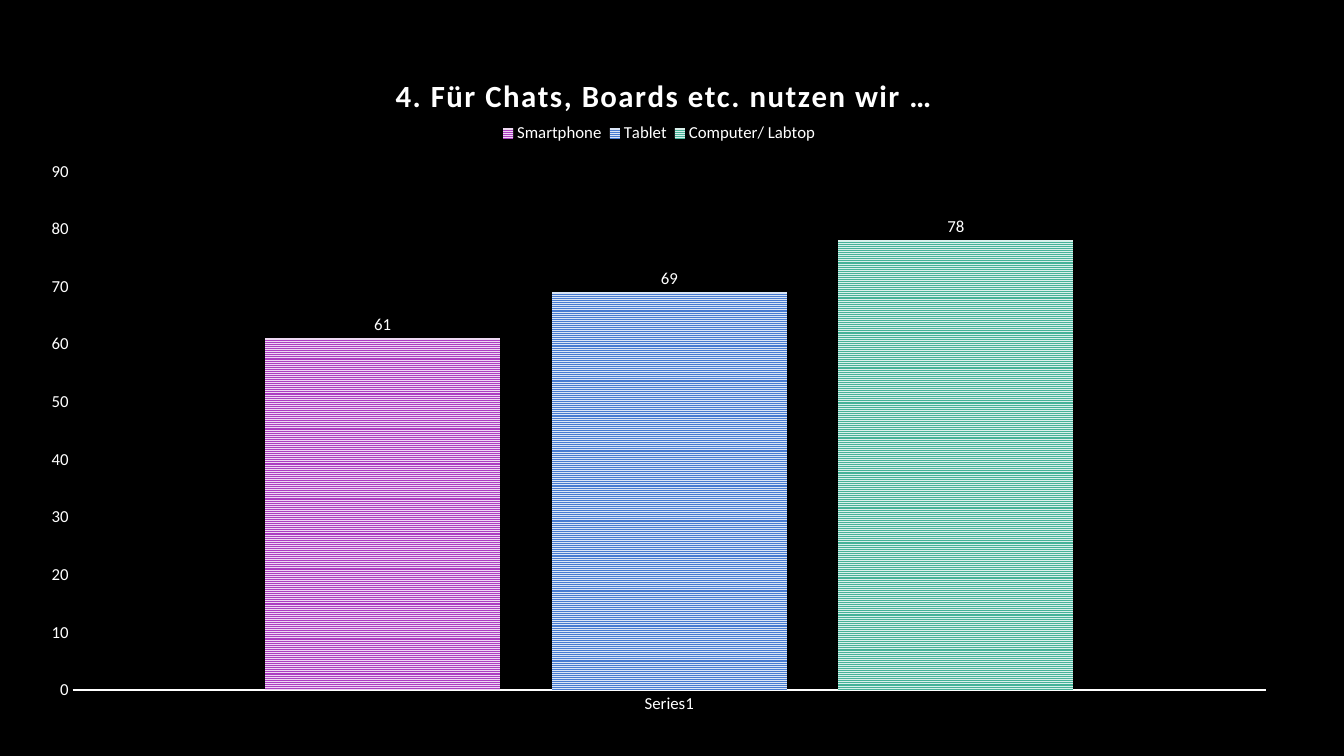
from lxml.etree import SubElement
from pptx import Presentation
from pptx.chart.data import CategoryChartData
from pptx.dml.color import RGBColor
from pptx.enum.chart import XL_CHART_TYPE, XL_LABEL_POSITION, XL_LEGEND_POSITION, XL_TICK_MARK
from pptx.enum.dml import MSO_PATTERN
from pptx.oxml import parse_xml
from pptx.oxml.ns import nsdecls, qn
from pptx.util import Pt

DEVICES = [
    ("Smartphone", 61, "AC3EC1", "EED8F3"),
    ("Tablet", 69, "477BD1", "DAE5F6"),
    ("Computer/ Labtop", 78, "46B298", "D9F0EB"),
]


def color(value):
    return RGBColor.from_string(value)


def place(element, index, target=None, **fractions):
    layout = element.find(qn("c:layout"))
    if layout is not None:
        element.remove(layout)
    layout = parse_xml(f"<c:layout {nsdecls('c')}><c:manualLayout/></c:layout>")
    manual = layout[0]
    if target:
        SubElement(manual, qn("c:layoutTarget")).set("val", target)
    for side in ("x", "y"):
        SubElement(manual, qn(f"c:{side}Mode")).set("val", "edge")
    for name, fraction in fractions.items():
        SubElement(manual, qn(f"c:{name}")).set("val", str(fraction))
    element.insert(index, layout)


class SurveySlide:
    typeface = "Calibri"
    ink = "FFFFFF"
    background = "000000"
    label_size = 12

    def __init__(self, deck):
        self.page = deck.slides.add_slide(deck.slide_layouts[6])
        fill = self.page.background.fill
        fill.solid()
        fill.fore_color.rgb = color(self.background)

    def style(self, font, size, bold=False):
        font.name = self.typeface
        font.size = Pt(size)
        font.bold = bold
        font.color.rgb = color(self.ink)

    def column_chart(self, left, top, width, height, category, devices):
        data = CategoryChartData()
        data.categories = [category]
        for name, count, _, _ in devices:
            data.add_series(name, [count])
        frame = self.page.shapes.add_chart(
            XL_CHART_TYPE.COLUMN_CLUSTERED, Pt(left), Pt(top), Pt(width), Pt(height), data)
        chart = frame.chart
        self.style(chart.font, self.label_size)
        plot = chart.plots[0]
        plot.vary_by_categories = False
        plot.gap_width = 164
        plot.overlap = -22
        for series, (_, _, stripe, ground) in zip(plot.series, devices):
            self.striped_series(series, stripe, ground)
        place(chart._chartSpace.chart.plotArea, 0, "inner", x=0.036, y=0.186, w=0.944, h=0.76)
        return chart

    def striped_series(self, series, stripe, ground):
        fill = series.format.fill
        fill.patterned()
        fill.pattern = MSO_PATTERN.NARROW_HORIZONTAL
        fill.fore_color.rgb = color(stripe)
        fill.back_color.rgb = color(ground)
        series.format.line.fill.background()
        labels = series.data_labels
        labels.show_value = True
        labels.position = XL_LABEL_POSITION.OUTSIDE_END
        self.style(labels.font, self.label_size)

    def axes(self, chart, maximum, step):
        for axis in (chart.category_axis, chart.value_axis):
            axis.major_tick_mark = XL_TICK_MARK.NONE
            axis.minor_tick_mark = XL_TICK_MARK.NONE
            axis.has_major_gridlines = False
            self.style(axis.tick_labels.font, self.label_size)
        base_line = chart.category_axis.format.line
        base_line.width = Pt(1.5)
        base_line.color.rgb = color(self.ink)
        counts = chart.value_axis
        counts.minimum_scale = 0
        counts.maximum_scale = maximum
        counts.major_unit = step
        counts.format.line.fill.background()

    def title(self, chart, text):
        chart.has_title = True
        title = chart.chart_title
        title.include_in_layout = False
        span = title.text_frame.paragraphs[0].add_run()
        span.text = text
        self.style(span.font, 22, bold=True)
        span.font._element.set("spc", "120")
        place(title._element, 1, x=0.287, y=0.036)

    def legend(self, chart):
        chart.has_legend = True
        legend = chart.legend
        legend.position = XL_LEGEND_POSITION.TOP
        legend.include_in_layout = False
        self.style(legend.font, self.label_size)
        place(legend._element, 1, x=0.37, y=0.11, w=0.26, h=0.04)


def main():
    deck = Presentation()
    deck.slide_width = Pt(960)
    deck.slide_height = Pt(540)
    survey = SurveySlide(deck)
    chart = survey.column_chart(19.44, 31.68, 902.88, 487.44, "Series1", DEVICES)
    survey.axes(chart, 90, 10)
    survey.title(chart, "4. Für Chats, Boards etc. nutzen wir …")
    survey.legend(chart)
    deck.save("out.pptx")


if __name__ == "__main__":
    main()
